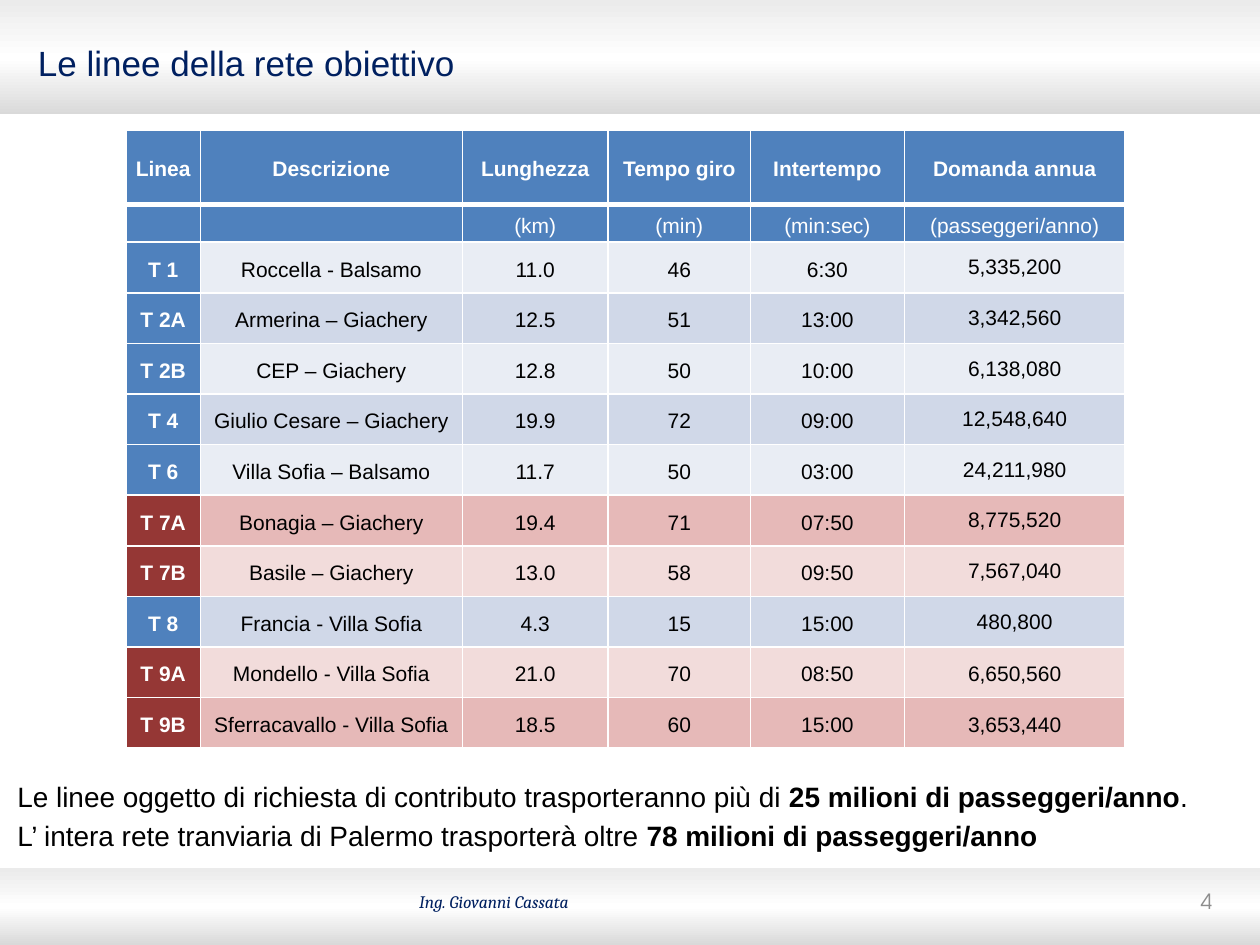
from lxml import etree
from pptx import Presentation
from pptx import util as u
from pptx.dml import color
from pptx.enum import shapes, text
from pptx.oxml import ns, parse_xml

THEME = {
    "navy": "002060", "black": "000000", "white": "FFFFFF", "grey": "8D8D8D",
    "blue": ("4F81BD", "E9EDF4", "D0D8E8"),
    "red": ("953735", "F2DCDB", "E6B9B8"),
    "band": ((0, "EBEBEB"), (51, "FFFFFF"), (100, "D9D9D9")),
    "title": 20, "body": 16, "cell": 12, "footer": 10,
    "font": "Arial", "footer_font": "Cambria", "number_font": "TeX Gyre Adventor",
}


def write(paragraph, wording, size, ink, name=THEME["font"], bold=False, italic=False):
    run = paragraph.add_run()
    run.text = wording
    formats = {"size": u.Pt(size), "name": name, "bold": bold, "italic": italic}
    for attribute, value in formats.items():
        setattr(run.font, attribute, value)
    run.font.color.rgb = color.RGBColor.from_string(ink)


def add_text(left, top, width, height, anchor=text.MSO_ANCHOR.TOP):
    frame = slide.shapes.add_textbox(u.Cm(left), u.Cm(top), u.Cm(width), u.Cm(height)).text_frame
    frame.word_wrap = True
    frame.vertical_anchor = anchor
    return frame


deck = Presentation()
deck.slide_width, deck.slide_height = u.Cm(25.4), u.Cm(19.05)
slide = deck.slides.add_slide(deck.slide_layouts[5])

stops = "".join(
    f'<a:gs pos="{position * 1000}"><a:srgbClr val="{tint}"/></a:gs>'
    for position, tint in THEME["band"]
)
for top, height in ((17.5, 1.55), (0, 2.31)):
    band = slide.shapes.add_shape(
        shapes.MSO_SHAPE.RECTANGLE, 0, u.Cm(top), deck.slide_width, u.Cm(height))
    band.shadow.inherit = False
    band.line.fill.background()
    gradient = parse_xml(
        f'<a:gradFill {ns.nsdecls("a")} rotWithShape="1"><a:gsLst>{stops}</a:gsLst>'
        '<a:lin ang="5400000" scaled="0"/></a:gradFill>')
    band._element.spPr.find(ns.qn("a:prstGeom")).addnext(gradient)

author = add_text(8.2, 17.83, 3.81, 0.69)
write(author.paragraphs[0], "Ing. Giovanni Cassata", THEME["footer"], THEME["navy"],
      name=THEME["footer_font"], italic=True)

title = slide.shapes.title
title_format = {"left": 0.51, "top": 0.38, "width": 24.21, "height": 1.75}
for attribute, value in title_format.items():
    setattr(title, attribute, u.Cm(value))
title.text_frame.vertical_anchor = text.MSO_ANCHOR.MIDDLE
heading = title.text_frame.paragraphs[0]
heading.alignment = text.PP_ALIGN.LEFT
write(heading, "Le linee della rete obiettivo", THEME["title"], THEME["navy"])
slide.shapes._spTree.append(title._element)

page = add_text(17.93, 17.65, 6.76, 1.02, text.MSO_ANCHOR.MIDDLE).paragraphs[0]
page.alignment = text.PP_ALIGN.RIGHT
write(page, "4", THEME["cell"], THEME["grey"], name=THEME["number_font"])

rows = [
    ("Linea", "Descrizione", "Lunghezza", "Tempo giro", "Intertempo", "Domanda annua"),
    ("", "", "(km)", "(min)", "(min:sec)", "(passeggeri/anno)"),
    ("T 1", "Roccella - Balsamo", "11.0", "46", "6:30", "5,335,200"),
    ("T 2A", "Armerina – Giachery", "12.5", "51", "13:00", "3,342,560"),
    ("T 2B", "CEP – Giachery", "12.8", "50", "10:00", "6,138,080"),
    ("T 4", "Giulio Cesare – Giachery", "19.9", "72", "09:00", "12,548,640"),
    ("T 6", "Villa Sofia – Balsamo", "11.7", "50", "03:00", "24,211,980"),
    ("T 7A", "Bonagia – Giachery", "19.4", "71", "07:50", "8,775,520"),
    ("T 7B", "Basile – Giachery", "13.0", "58", "09:50", "7,567,040"),
    ("T 8", "Francia - Villa Sofia", "4.3", "15", "15:00", "480,800"),
    ("T 9A", "Mondello - Villa Sofia", "21.0", "70", "08:50", "6,650,560"),
    ("T 9B", "Sferracavallo - Villa Sofia", "18.5", "60", "15:00", "3,653,440"),
]
funded = {"T 7A", "T 7B", "T 9A", "T 9B"}
widths = (1.5, 5.28, 2.94, 2.87, 3.1, 4.45)
heights = (1.5, 0.65) + (1.02,) * 10
cell_format = {
    "margin_left": u.Cm(0.18), "margin_right": u.Cm(0.18),
    "margin_top": 0, "margin_bottom": 0,
    "vertical_anchor": text.MSO_ANCHOR.MIDDLE,
}

lines = slide.shapes.add_table(
    len(rows), len(widths), u.Cm(2.54), u.Cm(2.62), u.Cm(sum(widths)), u.Cm(sum(heights))).table
for column, width in zip(lines.columns, widths):
    column.width = u.Cm(width)
for row, height in zip(lines.rows, heights):
    row.height = u.Cm(height)

for r, row in enumerate(rows):
    strong, light, dark = THEME["red" if row[0] in funded else "blue"]
    for c, wording in enumerate(row):
        cell = lines.cell(r, c)
        label = r < 2 or c == 0
        demand = r >= 2 and c == 5
        for attribute, value in cell_format.items():
            setattr(cell, attribute, value)
        cell.fill.solid()
        cell.fill.fore_color.rgb = color.RGBColor.from_string(
            strong if label else (light, dark)[r % 2])
        entry = cell.text_frame.paragraphs[0]
        entry.alignment = text.PP_ALIGN.CENTER
        entry.line_spacing = 1.0 if demand and r < 10 else 1.2
        entry.space_after = u.Pt(0 if demand else 6)
        write(entry, wording, THEME["cell"], THEME["white" if label else "black"],
              bold=label and r != 1)
        properties = cell._tc.get_or_add_tcPr()
        for i, side in enumerate("LRTB"):
            heavy = (r, side) in ((0, "B"), (1, "T"))
            border = etree.Element(ns.qn(f"a:ln{side}"), w=str(u.Pt(3 if heavy else 1)))
            paint = etree.SubElement(border, ns.qn("a:solidFill"))
            etree.SubElement(paint, ns.qn("a:srgbClr"), val=THEME["white"])
            properties.insert(i, border)

summary = (
    (("Le linee oggetto di richiesta di contributo trasporteranno più di ", False),
     ("25 milioni di passeggeri/anno", True), (".", False)),
    (("L’ intera rete tranviaria di Palermo trasporterà oltre ", False),
     ("78 milioni di passeggeri/anno", True)),
)
message = add_text(0.1, 15.49, 25.4, 1.75)
for i, sentence in enumerate(summary):
    paragraph = message.add_paragraph() if i else message.paragraphs[0]
    paragraph.line_spacing = 1.15
    for wording, bold in sentence:
        write(paragraph, wording, THEME["body"], THEME["black"], bold=bold)

deck.save("out.pptx")
